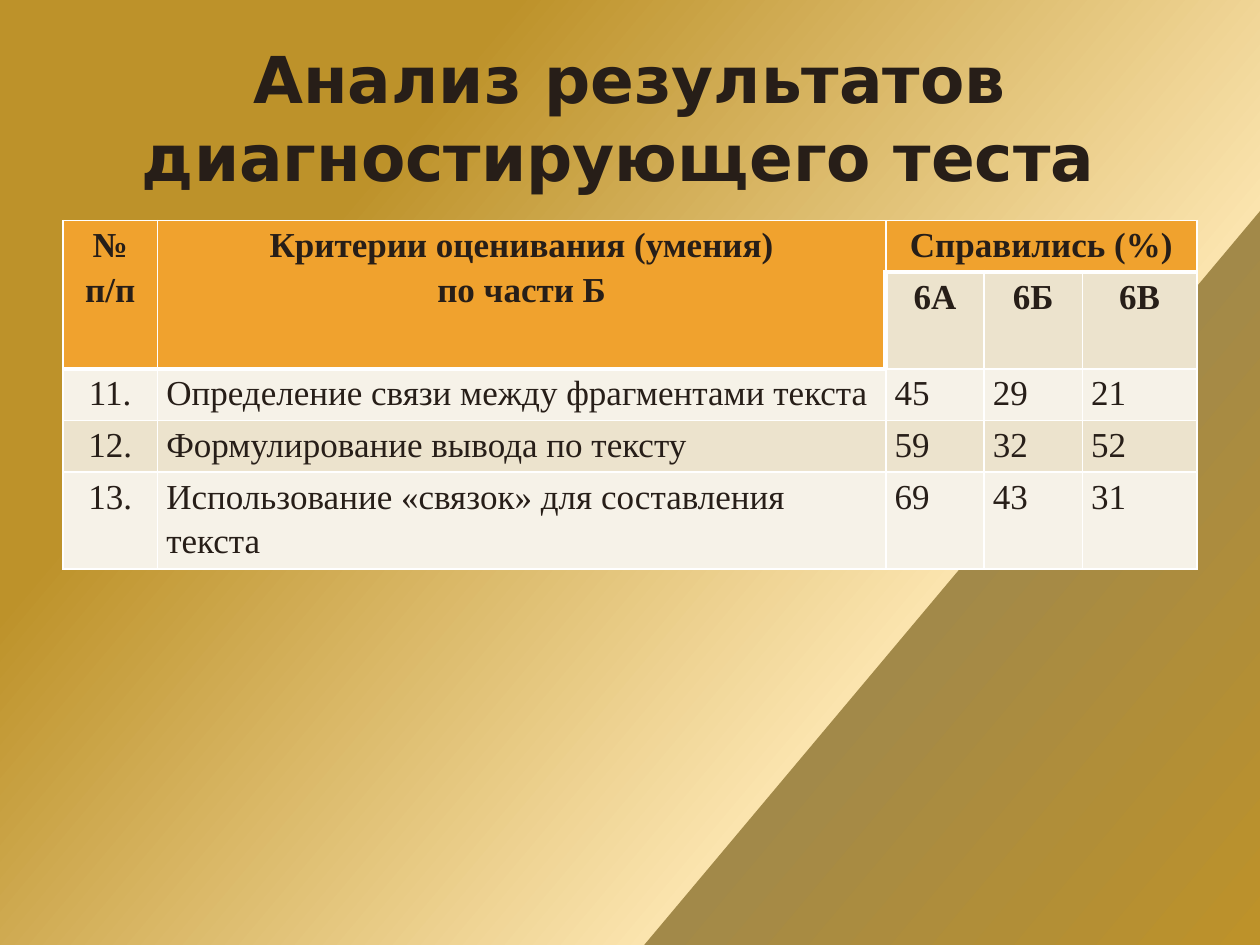
from lxml import etree
from pptx import Presentation
from pptx import util as u
from pptx.dml import color
from pptx.enum import text
from pptx.oxml import ns


def paint(hex_string):
    return color.RGBColor.from_string(hex_string)


def add_colour(parent, hex_string):
    etree.SubElement(parent, ns.qn("a:srgbClr"), val=hex_string)


deck = Presentation()
deck.slide_width, deck.slide_height = u.Inches(10), u.Inches(7.5)
column, row = deck.slide_width / 100, deck.slide_height / 75
page = deck.slides.add_slide(deck.slide_layouts[6])

backdrop = page.background.fill
backdrop.gradient()
gradient = page.background._cSld.bg.find(".//" + ns.qn("a:gradFill"))
for child in list(gradient):
    gradient.remove(child)
stops = etree.SubElement(gradient, ns.qn("a:gsLst"))
for percent, shade in [(0, "BD922A"), (25, "BD922A"), (70, "FBE4AE"),
                       (70, "A28949"), (100, "BD922A")]:
    add_colour(etree.SubElement(stops, ns.qn("a:gs"), pos=str(percent * 1000)), shade)
etree.SubElement(gradient, ns.qn("a:lin"), ang=str(40 * 60000), scaled="0")

INK = paint("271E18")
CENTER, LEFT = text.PP_ALIGN.CENTER, text.PP_ALIGN.LEFT

title = page.shapes.add_textbox(*map(int, (5 * column, 3 * row, 90 * column, 12.5 * row)))
title.text_frame.word_wrap = True
title.text_frame.vertical_anchor = text.MSO_ANCHOR.MIDDLE
para = title.text_frame.paragraphs[0]
para.alignment = CENTER
span = para.add_run()
span.text = "Анализ результатов диагностирующего теста "
for name, value in {"name": "DejaVu Sans", "size": u.Pt(36.9), "bold": True}.items():
    setattr(span.font, name, value)
span.font.color.rgb = INK

records = [
    ["№ п/п", "Критерии оценивания (умения)\nпо части Б", "Справились (%)", "", ""],
    ["", "", "6А", "6Б", "6В"],
    ["11.", "Определение связи между фрагментами текста", "45", "29", "21"],
    ["12.", "Формулирование вывода по тексту", "59", "32", "52"],
    ["13.", "Использование «связок» для составления текста", "69", "43", "31"],
]
widths = [7.5, 57.8, 7.8, 7.8, 9.1]
heights = [4.1, 7.1, 4.1, 4.1, 7.1]
table = page.shapes.add_table(
    len(heights), len(widths),
    *map(int, (5 * column, 17.5 * row, sum(widths) * column, sum(heights) * row))).table
for table_column, width in zip(table.columns, widths):
    table_column.width = int(width * column)
for table_row, height in zip(table.rows, heights):
    table_row.height = int(height * row)

cell_format = {"margin_left": u.Inches(0.07), "margin_right": u.Inches(0.07),
               "margin_top": 0, "margin_bottom": 0}
for r, record in enumerate(records):
    for c, words in enumerate(record):
        cell = table.cell(r, c)
        for name, value in cell_format.items():
            setattr(cell, name, value)

        header = r == 0 or (r == 1 and c < 2)
        heavy_sides = {
            "L": r == 1 and c == 2,
            "R": r == 1 and c == 1,
            "T": (r == 1 and c > 1) or (r == 2 and c < 2),
            "B": header,
        }
        properties = cell._tc.get_or_add_tcPr()
        for side, heavy in heavy_sides.items():
            line = etree.SubElement(properties, ns.qn("a:ln" + side),
                                    w=str(u.Pt(3 if heavy else 1)))
            add_colour(etree.SubElement(line, ns.qn("a:solidFill")), "FFFFFF")
        cell.fill.solid()
        cell.fill.fore_color.rgb = paint(
            "F0A22E" if header else "ECE3CD" if r % 2 else "F6F2E8")

        if not words:
            continue
        cell.text = words
        for para in cell.text_frame.paragraphs:
            para.alignment = CENTER if r < 2 or c == 0 else LEFT
            para.line_spacing = 1.15
            font = para.runs[0].font
            for name, value in {"name": "Times New Roman", "size": u.Pt(20),
                                "bold": r < 2}.items():
                setattr(font, name, value)
            font.color.rgb = INK

for first, last in [((0, 0), (1, 0)), ((0, 1), (1, 1)), ((0, 2), (0, 4))]:
    table.cell(*first).merge(table.cell(*last))

deck.save("out.pptx")
